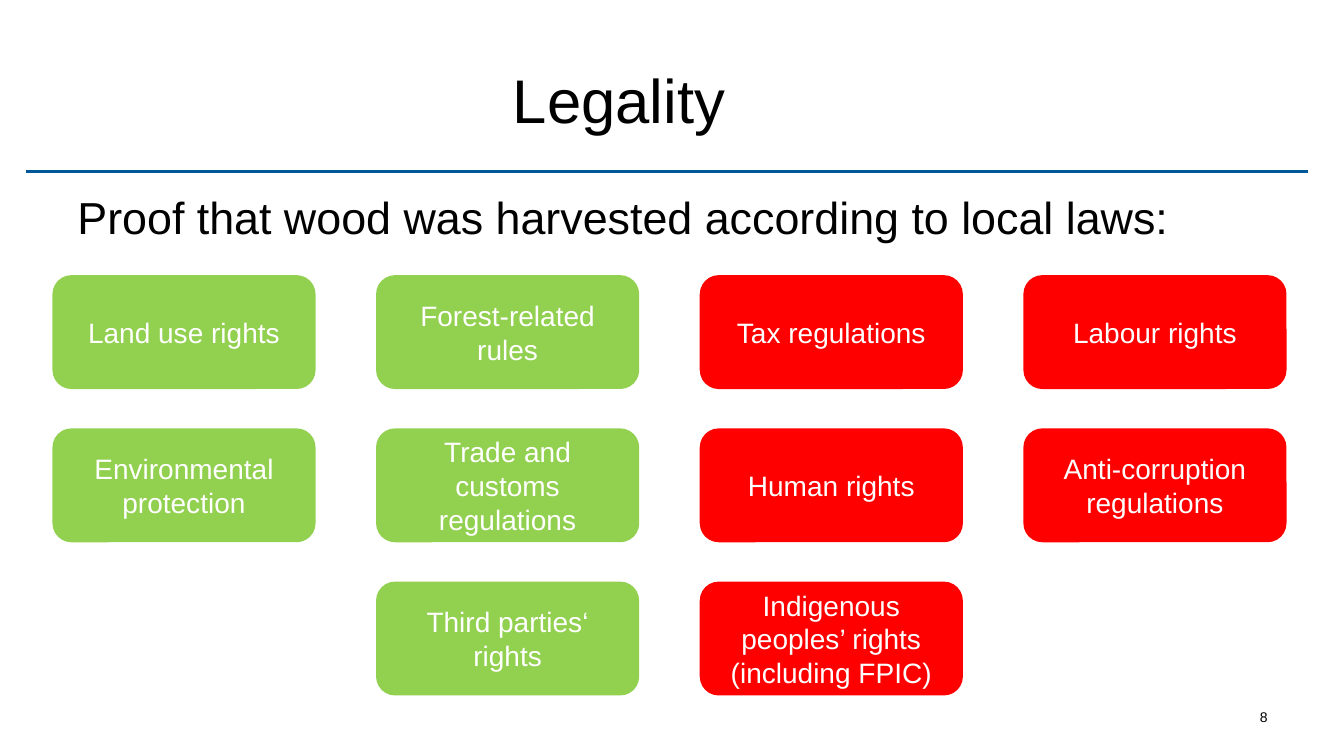
import pptx
import pptx.util
import pptx.dml.color
import pptx.enum.shapes
import pptx.enum.text
import pptx.oxml.ns
import lxml.etree

GREEN, RED, BLUE, BLACK, WHITE = "92D050", "FF0000", "00589A", "000000", "FFFFFF"
ALIGN = pptx.enum.text.PP_ALIGN
ANCHOR = pptx.enum.text.MSO_ANCHOR

REQUIREMENTS = [
    [("Land use rights", GREEN), ("Forest-related rules", GREEN),
     ("Tax regulations", RED), ("Labour rights", RED)],
    [("Environmental protection", GREEN), ("Trade and customs regulations", GREEN),
     ("Human rights", RED), ("Anti-corruption regulations", RED)],
    [None, ("Third parties‘ rights", GREEN),
     ("Indigenous peoples’ rights (including FPIC)", RED), None],
]


def color(value):
    return pptx.dml.color.RGBColor.from_string(value)


def assign(target, values):
    for name, value in values.items():
        setattr(target, name, value)


class LegalityPage:
    font = "Arial"
    grid_left, grid_top = 0.52, 2.73
    column_step, row_step = 3.21, 1.52
    card_width, card_height = 2.61, 1.13

    def __init__(self, deck):
        self.page = deck.slides.add_slide(deck.slide_layouts[5])

    def inches(self, *lengths):
        return [pptx.util.Inches(length) for length in lengths]

    def set_text(self, box, text, size, tint, align, anchor, top_inset=0.05):
        frame = box.text_frame
        side, top, bottom = self.inches(0.1, top_inset, 0.05)
        assign(frame, {
            "text": text,
            "word_wrap": True,
            "auto_size": pptx.enum.text.MSO_AUTO_SIZE.NONE,
            "vertical_anchor": anchor,
            "margin_left": side,
            "margin_right": side,
            "margin_top": top,
            "margin_bottom": bottom,
        })
        para = frame.paragraphs[0]
        para.alignment = align
        span = para.runs[0]
        assign(span.font, {"name": self.font, "size": pptx.util.Pt(size)})
        span.font.color.rgb = color(tint)

    def title(self, text, *place):
        box = self.page.shapes.title
        assign(box, dict(zip(("left", "top", "width", "height"), self.inches(*place))))
        self.set_text(box, text, 44, BLACK, ALIGN.CENTER, ANCHOR.MIDDLE)

    def label(self, text, size, align, top_inset, *place):
        box = self.page.shapes.add_textbox(*self.inches(*place))
        self.set_text(box, text, size, BLACK, align, ANCHOR.TOP, top_inset)

    def rule(self, left, right, height):
        line = self.page.shapes.add_connector(
            pptx.enum.shapes.MSO_CONNECTOR.STRAIGHT,
            *self.inches(left, height, right, height))
        line.line.color.rgb = color(BLUE)
        line.line.width = pptx.util.Pt(1.75)
        lxml.etree.SubElement(line._element.spPr, pptx.oxml.ns.qn("a:effectLst"))

    def card(self, column, row, text, fill):
        box = self.page.shapes.add_shape(
            pptx.enum.shapes.MSO_SHAPE.ROUNDED_RECTANGLE,
            *self.inches(self.grid_left + column * self.column_step,
                         self.grid_top + row * self.row_step,
                         self.card_width, self.card_height))
        box.shadow.inherit = False
        box.fill.solid()
        box.fill.fore_color.rgb = color(fill)
        box.line.fill.background()
        self.set_text(box, text, 20, WHITE, ALIGN.CENTER, ANCHOR.MIDDLE)


def main():
    deck = pptx.Presentation()
    assign(deck, {"slide_width": pptx.util.Inches(13.33),
                  "slide_height": pptx.util.Inches(7.5)})
    legality = LegalityPage(deck)
    legality.rule(0.26, 12.97, 1.7)
    legality.title("Legality", 1.52, 0.36, 9.24, 1.25)
    legality.label("Proof that wood was harvested according to local laws:",
                   32, ALIGN.LEFT, 0.13, 0.67, 1.75, 12, 0.8)
    legality.label("8", 10, ALIGN.RIGHT, 0.2, 9.56, 6.83, 3.11, 0.52)
    for row, requirements in enumerate(REQUIREMENTS):
        for column, requirement in enumerate(requirements):
            if requirement:
                legality.card(column, row, *requirement)
    deck.save("out.pptx")


if __name__ == "__main__":
    main()
